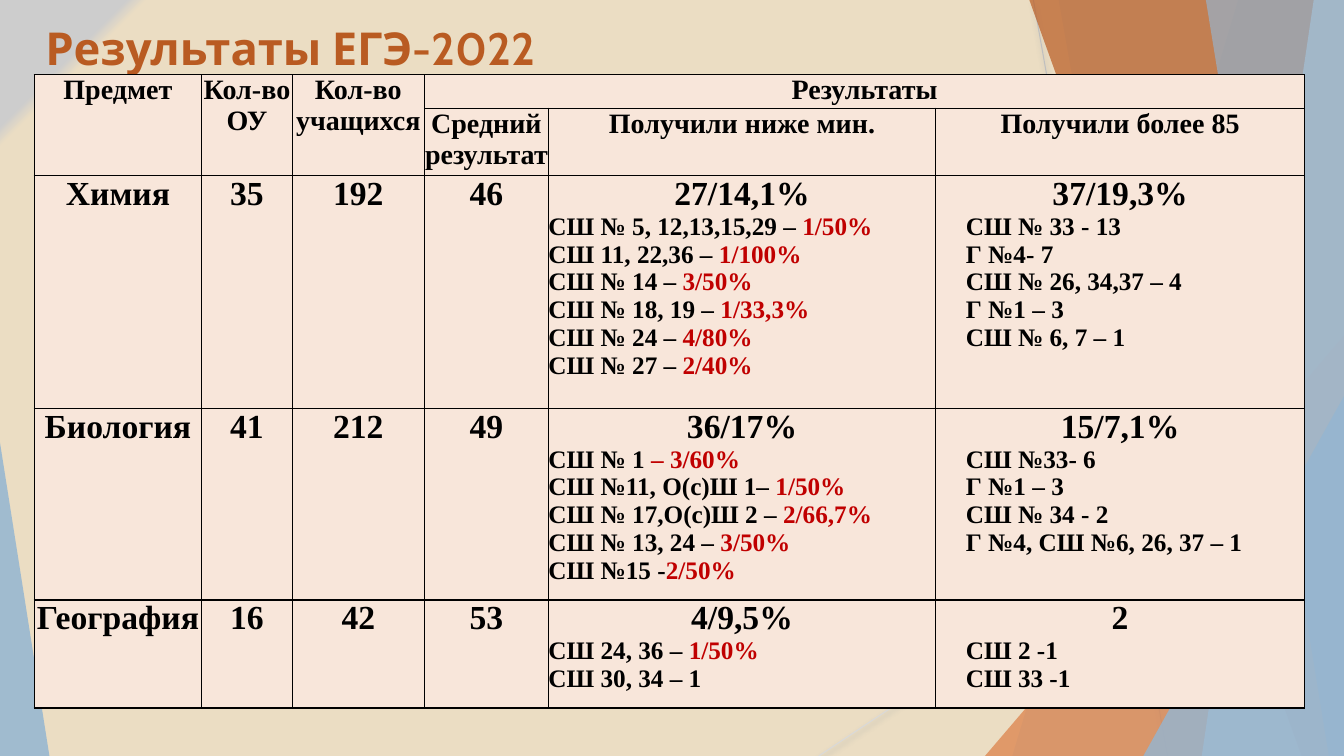
from pptx import Presentation
from pptx.dml.color import RGBColor
from pptx.enum.shapes import MSO_CONNECTOR, MSO_SHAPE
from pptx.enum.text import MSO_ANCHOR, PP_ALIGN
from pptx.oxml import parse_xml
from pptx.oxml.ns import nsdecls, qn
from pptx.oxml.xmlchemy import OxmlElement
from pptx.util import Inches, Pt

STRAIGHT = MSO_CONNECTOR.STRAIGHT
TRIANGLE, RIGHT_ANGLE = MSO_SHAPE.ISOSCELES_TRIANGLE, 1
LEFT, CENTER, TOP = PP_ALIGN.LEFT, PP_ALIGN.CENTER, MSO_ANCHOR.TOP

W, H = Inches(13.33), Inches(7.5)
SERIF, HEADING = "Times New Roman", "Cabin"

BLACK = RGBColor(0x00, 0x00, 0x00)
RED = RGBColor(0xC0, 0x00, 0x00)
RUST = RGBColor(0xB9, 0x5B, 0x22)
ORANGE = RGBColor(0xDD, 0x80, 0x47)
BLUE = RGBColor(0x94, 0xB6, 0xD2)
PALE_BLUE = RGBColor(0xBF, 0xD3, 0xE4)
GREY = RGBColor(0xBF, 0xBF, 0xBF)
PALE_GREY = RGBColor(0xD9, 0xD9, 0xD9)
SHADOW = RGBColor(0x4F, 0x6D, 0x86)
SAND = RGBColor(0xEB, 0xDD, 0xC3)
SILVER = RGBColor(0xCD, 0xCD, 0xCD)
CELL = RGBColor(0xF8, 0xE6, 0xDA)

# Column widths and row heights, in percent of the slide
COLS = [12.45, 6.75, 9.83, 9.23, 28.81, 27.46]
ROWS = [4.23, 8.47, 30.8, 24.2, 14.3]

# Header cells: row, column, last row, last column, text
HEADERS = [
    (0, 0, 1, 0, "Предмет"),
    (0, 1, 1, 1, "Кол-во ОУ"),
    (0, 2, 1, 2, "Кол-во учащихся"),
    (0, 3, 0, 5, "Результаты"),
    (1, 3, 1, 3, "Средний результат"),
    (1, 4, 1, 4, "Получили ниже мин."),
    (1, 5, 1, 5, "Получили более 85"),
]

# Each cell is a heading and its schools; the part after "|" is red
SUBJECTS = [
    [["Химия"], ["35"], ["192"], ["46"],
     ["27/14,1%", "СШ № 5, 12,13,15,29 – |1/50%", "СШ 11, 22,36 – |1/100%",
      "СШ № 14 – |3/50%", "СШ № 18, 19 – |1/33,3%", "СШ № 24 – |4/80%",
      "СШ № 27 – |2/40%"],
     ["37/19,3%", "СШ № 33 - 13", "Г №4- 7", "СШ № 26, 34,37 – 4",
      "Г №1 – 3", "СШ № 6, 7 – 1"]],
    [["Биология"], ["41"], ["212"], ["49"],
     ["36/17%", "СШ № 1 |– 3/60%", "СШ №11, О(с)Ш 1– |1/50%",
      "СШ № 17,О(с)Ш 2 – |2/66,7%", "СШ № 13, 24 – |3/50%",
      "СШ №15 -|2/50%"],
     ["15/7,1%", "СШ №33- 6", "Г №1 – 3", "СШ № 34 - 2",
      "Г №4, СШ №6, 26, 37 – 1"]],
    [["География"], ["16"], ["42"], ["53"],
     ["4/9,5%", "СШ 24, 36 – |1/50%", "СШ 30, 34 – 1"],
     ["2", "СШ 2 -1", "СШ 33 -1"]],
]


def across(percent):
    return int(W * percent / 100)


def down(percent):
    return int(H * percent / 100)


def set_background(s):
    s.background.fill.gradient()
    grad = s.element.find(".//" + qn("a:gradFill"))
    grad.getparent().replace(grad, parse_xml(
        f'<a:gradFill {nsdecls("a")} rotWithShape="1"><a:gsLst>'
        f'<a:gs pos="93000"><a:srgbClr val="{SAND}"/></a:gs>'
        f'<a:gs pos="94000"><a:srgbClr val="{SILVER}"/></a:gs></a:gsLst>'
        '<a:path path="circle"><a:fillToRect l="100000" t="100000"/></a:path>'
        '</a:gradFill>'))


def add_ray(s, x1, y1, x2, y2, color):
    ray = s.shapes.add_connector(STRAIGHT, across(x1), down(y1), across(x2), down(y2))
    ray.line.color.rgb = color
    ray.line.width = Pt(0.75)
    ray.element.spPr.append(parse_xml(
        f'<a:effectLst {nsdecls("a")}>'
        f'<a:outerShdw blurRad="{Pt(4)}" dist="{Pt(2)}" dir="5400000">'
        f'<a:srgbClr val="{SHADOW}"><a:alpha val="38000"/></a:srgbClr>'
        '</a:outerShdw></a:effectLst>'))


def paint(sp, color, opacity):
    sp.shadow.inherit = False
    sp.line.fill.background()
    sp.fill.solid()
    sp.fill.fore_color.rgb = color
    alpha = OxmlElement("a:alpha")
    alpha.set("val", str(opacity * 1000))
    sp.element.spPr.find(".//" + qn("a:srgbClr")).append(alpha)


def add_facet(s, top_x, bottom_x, color, opacity):
    """Full-height facet that reaches the right edge of the slide."""
    outline = s.shapes.build_freeform(across(top_x), 0)
    outline.add_line_segments([(W, 0), (W, H), (across(bottom_x), H)], close=True)
    paint(outline.convert_to_shape(), color, opacity)


def add_corner(s, x, y, width, peak, color, opacity):
    """Triangle standing on the bottom edge of the slide."""
    sp = s.shapes.add_shape(TRIANGLE, across(x), down(y), across(width), H - down(y))
    sp.adjustments[0] = peak
    paint(sp, color, opacity)


def format_run(r, size, color, font=SERIF):
    r.font.name = font
    r.font.size = Pt(size)
    r.font.bold = True
    r.font.color.rgb = color


def add_title(s, text):
    tf = s.shapes.add_textbox(across(2.63), down(2), across(70.52), down(6)).text_frame
    tf.word_wrap = True
    tf.vertical_anchor = TOP
    tf.text = text
    format_run(tf.paragraphs[0].runs[0], 32.4, RUST, HEADING)


def style_cell(cell):
    cell.margin_left = cell.margin_right = cell.margin_top = cell.margin_bottom = 0
    tcPr = cell._tc.get_or_add_tcPr()
    for side in ("lnL", "lnR", "lnT", "lnB"):
        tcPr.append(parse_xml(
            f'<a:{side} {nsdecls("a")} w="{Pt(1)}"><a:solidFill>'
            f'<a:srgbClr val="{BLACK}"/></a:solidFill></a:{side}>'))
    cell.fill.solid()
    cell.fill.fore_color.rgb = CELL


def fill_cell(cell, lines, heading_size, indent=0):
    tf = cell.text_frame
    for i, line in enumerate(lines):
        p = tf.paragraphs[0] if i == 0 else tf.add_paragraph()
        p.alignment = LEFT if i else CENTER
        if i and indent:
            p._p.get_or_add_pPr().set("indent", str(Inches(indent)))
        for part, color in zip(line.split("|"), (BLACK, RED)):
            r = p.add_run()
            r.text = part
            format_run(r, 18 if i else heading_size, color)


def add_results(s):
    table = s.shapes.add_table(len(ROWS), len(COLS), across(2.55), down(9.87),
                               across(sum(COLS)), down(sum(ROWS))).table
    table.first_row = table.horz_banding = False
    for column, width in zip(table.columns, COLS):
        column.width = across(width)
    for row, height in zip(table.rows, ROWS):
        row.height = down(height)
    for cell in table.iter_cells():
        style_cell(cell)
    for row, col, last_row, last_col, text in HEADERS:
        cell = table.cell(row, col)
        if (row, col) != (last_row, last_col):
            cell.merge(table.cell(last_row, last_col))
        fill_cell(cell, [text], 20)
    for row, subject in enumerate(SUBJECTS, start=2):
        for col, lines in enumerate(subject):
            fill_cell(table.cell(row, col), lines, 24, 0.3 if col == 5 else 0)


def main():
    prs = Presentation()
    prs.slide_width, prs.slide_height = W, H
    s = prs.slides.add_slide(prs.slide_layouts[6])

    # Backdrop, from back to front
    set_background(s)
    add_ray(s, 76.89, 0, 86.87, 100, GREY)
    add_ray(s, 100, 53.73, 60.92, 100, PALE_GREY)
    add_facet(s, 92.12, 75.32, BLUE, 30)
    add_facet(s, 78.77, 88.75, BLUE, 20)
    add_corner(s, 73.29, 44.4, 26.71, RIGHT_ANGLE, ORANGE, 72)
    add_facet(s, 76.59, 96.85, RUST, 70)
    add_facet(s, 97.75, 89.42, PALE_BLUE, 70)
    add_facet(s, 89.72, 98.87, BLUE, 65)
    add_corner(s, 85.07, 52.4, 14.93, RIGHT_ANGLE, BLUE, 80)
    add_corner(s, 0, 58.53, 3.68, 0, BLUE, 85)

    # Content
    add_title(s, "Результаты ЕГЭ-2022")
    add_results(s)
    prs.save("out.pptx")


if __name__ == "__main__":
    main()
